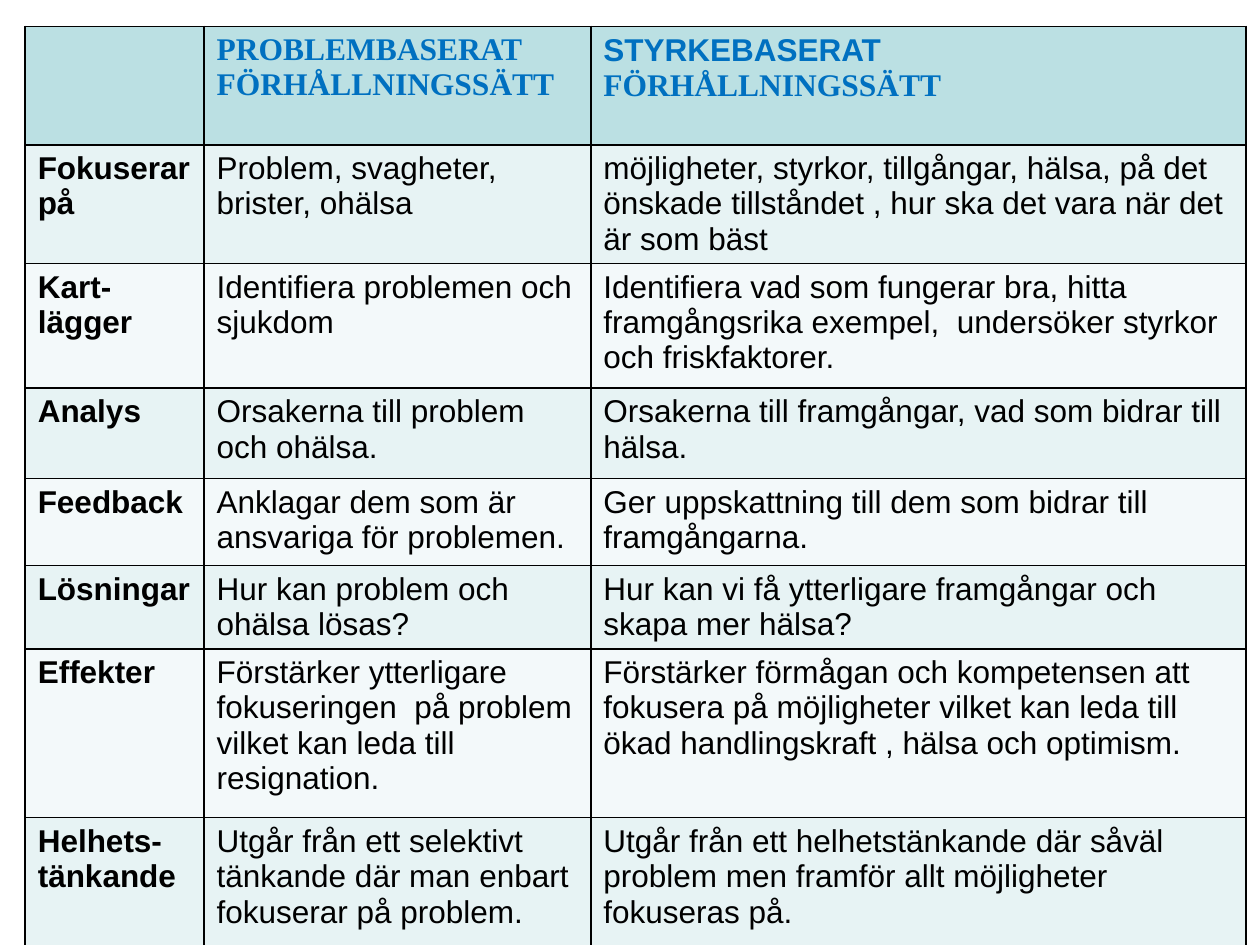
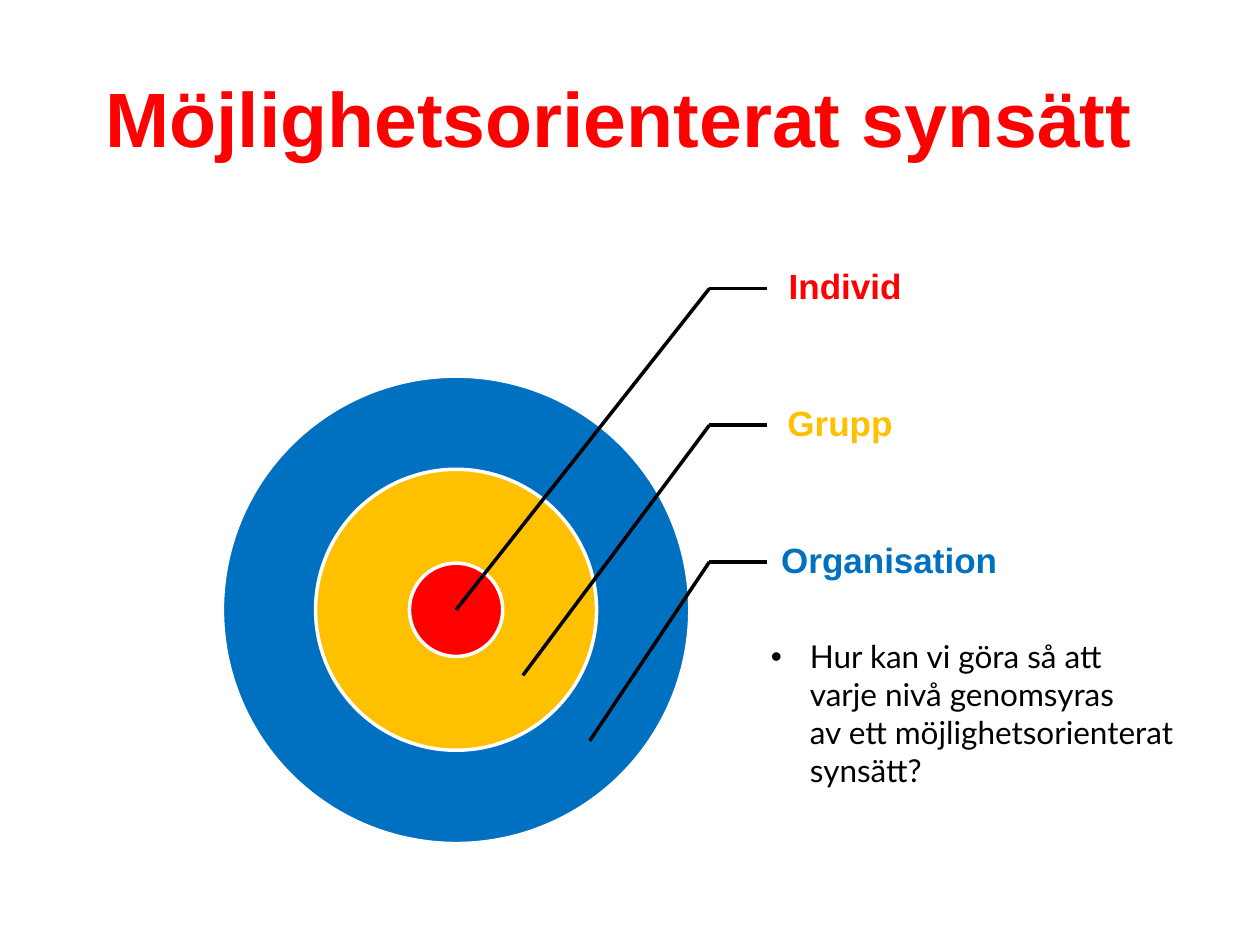
from lxml import etree
from pptx import Presentation
from pptx.dml.color import RGBColor
from pptx.enum import shapes, text
from pptx.oxml import ns
from pptx.util import Inches, Pt

COLORS = {
    "red": "FF0000", "amber": "FFC000", "blue": "0070C0",
    "black": "000000", "white": "FFFFFF",
    "header": "BBE0E3", "band_dark": "E7F3F4", "band_light": "F3F9FA",
}
SANS, SERIF, BODY = "Arial", "Times New Roman", "Lato"

# Each header is a list of paragraphs with their fonts
HEADERS = [
    [],
    [("PROBLEMBASERAT FÖRHÅLLNINGSSÄTT", SERIF)],
    [("STYRKEBASERAT", SANS), ("FÖRHÅLLNINGSSÄTT", SERIF)],
]
ROWS = [
    ("Fokuserar på",
     "Problem, svagheter, brister, ohälsa",
     "möjligheter, styrkor, tillgångar, hälsa, på det önskade tillståndet , "
     "hur ska det vara när det är som bäst"),
    ("Kart-\nlägger",
     "Identifiera problemen och sjukdom",
     "Identifiera vad som fungerar bra, hitta framgångsrika exempel,  "
     "undersöker styrkor och friskfaktorer."),
    ("Analys",
     "Orsakerna till problem och ohälsa.",
     "Orsakerna till framgångar, vad som bidrar till hälsa."),
    ("Feedback",
     "Anklagar dem som är ansvariga för problemen.",
     "Ger uppskattning till dem som bidrar till framgångarna."),
    ("Lösningar",
     "Hur kan problem och ohälsa lösas?",
     "Hur kan vi få ytterligare framgångar och skapa mer hälsa?"),
    ("Effekter",
     "Förstärker ytterligare fokuseringen  på problem vilket kan leda till "
     "resignation.",
     "Förstärker förmågan och kompetensen att fokusera på möjligheter vilket "
     "kan leda till ökad handlingskraft , hälsa och optimism."),
    ("Helhets-tänkande",
     "Utgår från ett selektivt tänkande där man enbart fokuserar på problem.",
     "Utgår från ett helhetstänkande där såväl problem men framför allt "
     "möjligheter fokuseras på."),
]
COLUMN_WIDTHS = [1.42, 3.07, 5.2]
ROW_HEIGHTS = [0.94, 0.94, 0.99, 0.72, 0.69, 0.66, 1.34, 1.1]

TITLE = "Möjlighetsorienterat synsätt "
# Level, colour, ring diameter, left inset of its label
LEVELS = [
    ("Individ", "red", 0.74, 0.17),
    ("Grupp", "amber", 2.23, 0.16),
    ("Organisation", "blue", 3.71, 0.11),
]
QUESTION = ["Hur kan vi göra så att ", "varje nivå genomsyras",
            "av ett möjlighetsorienterat synsätt?"]
CENTER_X, CENTER_Y = 3.62, 4.84
POINTER_STEP_X, POINTER_STEP_Y = 0.53, 0.52
ELBOW_X, LABEL_X = 5.63, 6.09
LABEL_TOP, LABEL_STEP, LABEL_HEIGHT = 1.75, 1.085, 1.08


def rgb(name):
    return RGBColor.from_string(COLORS[name])


def add_span(para, words, size, color, font=SANS, bold=False):
    span = para.add_run()
    span.text = words
    span.font.size = Pt(size)
    span.font.name = font
    span.font.bold = bold
    span.font.color.rgb = rgb(color)


def add_paragraphs(frame, lines, color, bold):
    """Write (words, font) pairs as paragraphs of table text."""
    for index, (words, font) in enumerate(lines):
        para = frame.add_paragraph() if index else frame.paragraphs[0]
        add_span(para, words, 18, color, font, bold)


def add_box(page, left, top, width, height, anchor=text.MSO_ANCHOR.TOP):
    box = page.shapes.add_textbox(*map(Inches, (left, top, width, height)))
    box.text_frame.word_wrap = True
    box.text_frame.vertical_anchor = anchor
    return box


def add_line(page, start, end):
    line = page.shapes.add_connector(
        shapes.MSO_CONNECTOR.STRAIGHT, *map(Inches, start + end))
    line.line.color.rgb = rgb("black")
    line.line.width = Pt(2)
    etree.SubElement(line._element.spPr, ns.qn("a:effectLst"))
    return line


def style_cell(cell, fill):
    """Give the cell thin black borders and a fill."""
    properties = cell._tc.get_or_add_tcPr()
    for side in ("lnL", "lnR", "lnT", "lnB"):
        border = etree.SubElement(properties, ns.qn("a:" + side), w=str(Pt(1)))
        solid = etree.SubElement(border, ns.qn("a:solidFill"))
        etree.SubElement(solid, ns.qn("a:srgbClr"), val=COLORS["black"])
    cell.fill.solid()
    cell.fill.fore_color.rgb = rgb(fill)


def build_comparison(page):
    table = page.shapes.add_table(
        len(ROW_HEIGHTS), len(COLUMN_WIDTHS), Inches(0.2), Inches(0.21),
        Inches(sum(COLUMN_WIDTHS)), Inches(sum(ROW_HEIGHTS))).table
    for column, width in zip(table.columns, COLUMN_WIDTHS):
        column.width = Inches(width)
    for row, height in zip(table.rows, ROW_HEIGHTS):
        row.height = Inches(height)
    for column, lines in enumerate(HEADERS):
        cell = table.cell(0, column)
        style_cell(cell, "header")
        add_paragraphs(cell.text_frame, lines, "blue", True)
    for row, entries in enumerate(ROWS, start=1):
        for column, entry in enumerate(entries):
            cell = table.cell(row, column)
            style_cell(cell, "band_dark" if row % 2 else "band_light")
            lines = [(line, SANS) for line in entry.split("\n")]
            add_paragraphs(cell.text_frame, lines, "black", column == 0)


def add_ring(page, color, diameter):
    ring = page.shapes.add_shape(
        shapes.MSO_SHAPE.OVAL,
        Inches(CENTER_X - diameter / 2), Inches(CENTER_Y - diameter / 2),
        Inches(diameter), Inches(diameter))
    ring.shadow.inherit = False
    ring.fill.solid()
    ring.fill.fore_color.rgb = rgb(color)
    ring.line.color.rgb = rgb("white")
    ring.line.width = Pt(2)


def add_level_label(page, index, name, color, inset):
    """Add a level's label and the bent pointer to its ring."""
    top = LABEL_TOP + index * LABEL_STEP
    middle = top + LABEL_HEIGHT / 2
    label = add_box(page, LABEL_X, top, 2, LABEL_HEIGHT, text.MSO_ANCHOR.MIDDLE)
    frame = label.text_frame
    frame.margin_left = Inches(inset)
    frame.margin_right = frame.margin_top = frame.margin_bottom = Inches(0.03)
    frame.paragraphs[0].line_spacing = 0.9
    add_span(frame.paragraphs[0], name, 20, color, bold=True)

    elbow = (ELBOW_X, middle)
    add_line(page, elbow, (LABEL_X, middle)).end_connect(label, 1)
    add_line(page, elbow, (CENTER_X + index * POINTER_STEP_X,
                           CENTER_Y + index * POINTER_STEP_Y))


def add_question(page):
    para = add_box(page, 6.02, 5.01, 3.7, 1.31).text_frame.paragraphs[0]
    properties = para._p.get_or_add_pPr()
    properties.set("marL", str(Inches(0.31)))
    properties.set("indent", str(-Inches(0.31)))
    etree.SubElement(properties, ns.qn("a:buFont"), typeface=SANS)
    etree.SubElement(properties, ns.qn("a:buChar"), char="•")
    for index, line in enumerate(QUESTION):
        if index:
            para.add_line_break()
        add_span(para, line, 18, "black", BODY)


def build_target(page):
    title = add_box(page, 0.5, 0.3, 9, 1.25, text.MSO_ANCHOR.MIDDLE)
    para = title.text_frame.paragraphs[0]
    para.alignment = text.PP_ALIGN.CENTER
    add_span(para, TITLE, 44, "red", bold=True)
    for _, color, diameter, _ in reversed(LEVELS):
        add_ring(page, color, diameter)
    for index, (name, color, _, inset) in enumerate(LEVELS):
        add_level_label(page, index, name, color, inset)
    add_question(page)


def main():
    deck = Presentation()
    deck.slide_width, deck.slide_height = Inches(10), Inches(7.5)
    for build in (build_comparison, build_target):
        build(deck.slides.add_slide(deck.slide_layouts[6]))
    deck.save("out.pptx")


if __name__ == "__main__":
    main()
